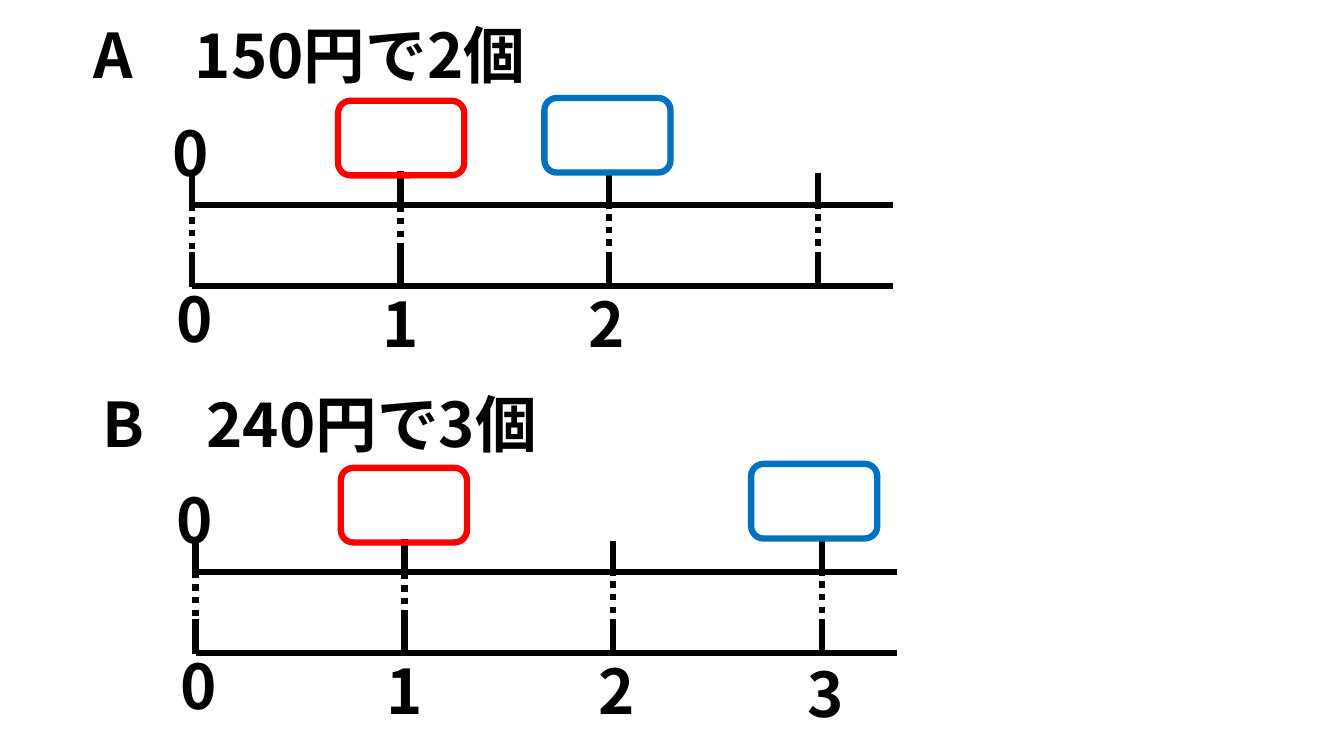
"""Two double number lines comparing price and count."""
import pptx
import pptx.util
import pptx.dml.color
import pptx.enum.dml
import pptx.enum.shapes
import pptx.enum.text
import pptx.oxml.ns
import lxml.etree

Cm = pptx.util.Cm
Pt = pptx.util.Pt
RGB = pptx.dml.color.RGBColor
BLACK = RGB(0, 0, 0)
RED = RGB(255, 0, 0)
BLUE = RGB(0, 0x70, 0xC0)
FONT = "Noto Sans CJK JP"

ROWS = [
    {"title": "A　150円で2個", "at": (4.83, 5.16), "head": (-2.72, -4.85),
     "nums": [("0", -0.64, 1.8), ("1", -0.71, 1.93), ("2", -0.76, 1.93)],
     "boxes": [(1, RED, -1.57, -2.62), (2, BLUE, -1.63, -2.69)]},
    {"title": "B　240円で3個", "at": (4.93, 14.41), "head": (-2.59, -4.8),
     "nums": [("0", -0.64, 1.8), ("1", -0.71, 1.93), ("2", -0.61, 1.93),
              ("3", -0.61, 2.0)],
     "boxes": [(1, RED, -1.6, -2.62), (3, BLUE, -1.78, -2.72)]},
]
TICKS = [(-0.79, 0), (-0.84, -0.3), (-0.79, -0.08), (-0.79, -0.08)]
STEP, SPAN, GAP = 5.26, 17.68, 2.04
TICK, DROP, DOTS = 0.89, 1.98, 1.5
BOX = (3.18, 1.88)
LABEL, TITLE, HIGH = 1.68, 13.34, 2.13

deck = pptx.Presentation()
deck.slide_width = Cm(33.87)
deck.slide_height = Cm(19.05)
slide = deck.slides.add_slide(deck.slide_layouts[6])


def line(x1, y1, x2, y2, dash=None):
    item = slide.shapes.add_connector(
        pptx.enum.shapes.MSO_CONNECTOR.STRAIGHT, Cm(x1), Cm(y1), Cm(x2), Cm(y2))
    item.line.color.rgb = BLACK
    item.line.width = Pt(4.5)
    if dash:
        item.line.dash_style = dash
    lxml.etree.SubElement(item._element.spPr, pptx.oxml.ns.qn("a:effectLst"))


def text(words, x, y, wide):
    frame = slide.shapes.add_textbox(Cm(x), Cm(y), Cm(wide), Cm(HIGH)).text_frame
    frame.word_wrap = True
    frame.auto_size = pptx.enum.text.MSO_AUTO_SIZE.SHAPE_TO_FIT_TEXT
    para = frame.paragraphs[0]
    para.text = words
    font = para.font
    font.size, font.bold, font.name = Pt(44), True, FONT
    font.color.rgb = BLACK
    east = lxml.etree.SubElement(font._element, pptx.oxml.ns.qn("a:ea"))
    east.set("typeface", FONT)


def box(x, y, color):
    item = slide.shapes.add_shape(
        pptx.enum.shapes.MSO_SHAPE.ROUNDED_RECTANGLE,
        Cm(x), Cm(y), Cm(BOX[0]), Cm(BOX[1]))
    item.shadow.inherit = False
    item.fill.background()
    item.line.color.rgb = color
    item.line.width = Pt(4.5)


def scale(row):
    left, top = row["at"]
    text(row["title"], left + row["head"][0], top + row["head"][1], TITLE)
    text("0", left - 0.74, top - 2.4, LABEL)
    for y in (top, top + GAP):
        line(left, y, left + SPAN, y)
    for i, (rise, dots) in enumerate(TICKS):
        x = left + i * STEP
        for y in (top + rise, top + rise + DROP):
            line(x, y, x, y + TICK)
        line(x, top + dots, x, top + dots + DOTS,
             pptx.enum.dml.MSO_LINE.ROUND_DOT)
    for i, (num, dx, dy) in enumerate(row["nums"]):
        text(num, left + i * STEP + dx, top + dy, LABEL)
    for i, color, dx, dy in row["boxes"]:
        box(left + i * STEP + dx, top + dy, color)


for row in ROWS:
    scale(row)
deck.save("out.pptx")
